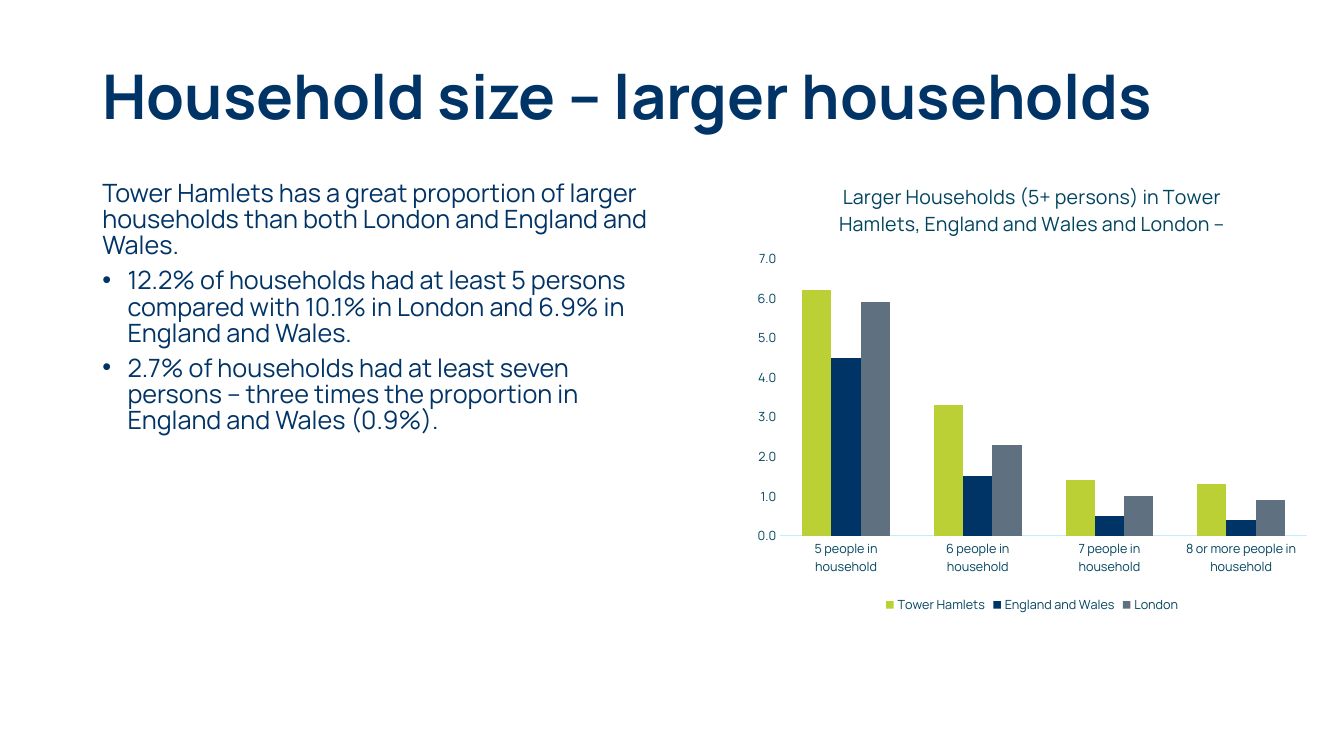
from pptx import Presentation
from pptx.chart.data import CategoryChartData
from pptx.dml.color import RGBColor
from pptx.enum.chart import XL_CHART_TYPE, XL_LEGEND_POSITION, XL_TICK_MARK
from pptx.enum.text import MSO_ANCHOR
from pptx.oxml import parse_xml
from pptx.oxml.ns import nsdecls
from pptx.util import Pt
from lxml.etree import SubElement
from pptx.oxml.ns import qn

THEME = {
    "font": "Manrope",
    "navy": RGBColor.from_string("003366"),
    "teal": RGBColor.from_string("00445E"),
    "lime": RGBColor.from_string("BBD034"),
    "slate": RGBColor.from_string("5F7180"),
    "axis": RGBColor.from_string("C1EEFF"),
    "title_size": Pt(44),
    "body_size": Pt(18),
    "chart_title_size": Pt(14),
    "label_size": Pt(9),
}


def style_font(font, size, color, bold=False):
    font.name = THEME["font"]
    font.size = size
    font.color.rgb = color
    font.bold = bold


def add_text_box(slide, left, top, width, height, text):
    box = slide.shapes.add_textbox(Pt(left), Pt(top), Pt(width), Pt(height))
    box.text_frame.word_wrap = True
    box.text_frame.text = text
    return box.text_frame


deck = Presentation()
deck.slide_width, deck.slide_height = Pt(960), Pt(540)
page = deck.slides.add_slide(deck.slide_layouts[6])

title_frame = add_text_box(page, 66, 18.72, 769.68, 104.4, "Household size – larger households")
title_frame.vertical_anchor = MSO_ANCHOR.MIDDLE
title_frame.paragraphs[0].line_spacing = 0.9
style_font(title_frame.paragraphs[0].runs[0].font, THEME["title_size"], THEME["navy"], True)

findings = [
    "Tower Hamlets has a great proportion of larger households than both London and England and Wales.",
    "12.2% of households had at least 5 persons compared with 10.1% in London and 6.9% in England and Wales.",
    "2.7% of households had at least seven persons – three times the proportion in England and Wales (0.9%).",
]
body_frame = add_text_box(page, 66, 126, 414, 342.72, "\n".join(findings))
for index, para in enumerate(body_frame.paragraphs):
    para.line_spacing = 0.87
    if index > 0:
        para.space_before = Pt(6)
        properties = para._p.get_or_add_pPr()
        properties.set("marL", str(Pt(18)))
        properties.set("indent", str(Pt(-18)))
        SubElement(properties, qn("a:buFont")).set("typeface", "Arial")
        SubElement(properties, qn("a:buChar")).set("char", "•")
    style_font(para.runs[0].font, THEME["body_size"], THEME["navy"])

households = CategoryChartData(number_format="#,##0.0")
households.categories = [
    "5 people in household",
    "6 people in household",
    "7 people in household",
    "8 or more people in household",
]
areas = [
    ("Tower Hamlets", (6.2, 3.3, 1.4, 1.3), THEME["lime"]),
    ("England and Wales", (4.5, 1.5, 0.5, 0.4), THEME["navy"]),
    ("London", (5.9, 2.3, 1.0, 0.9), THEME["slate"]),
]
for name, shares, color in areas:
    households.add_series(name, shares)

chart = page.shapes.add_chart(
    XL_CHART_TYPE.COLUMN_CLUSTERED, Pt(532.8), Pt(116.64), Pt(408.96), Pt(324.72), households
).chart
style_font(chart.font, THEME["label_size"], THEME["teal"])

chart.has_title = True
chart_title = chart.chart_title.text_frame
chart_title.text = "Larger Households (5+ persons) in Tower Hamlets, England and Wales and London –"
style_font(chart_title.paragraphs[0].runs[0].font, THEME["chart_title_size"], THEME["teal"])
chart.chart_title.include_in_layout = False

chart.has_legend = True
chart.legend.position = XL_LEGEND_POSITION.BOTTOM
chart.legend.include_in_layout = False
style_font(chart.legend.font, THEME["label_size"], THEME["teal"])

plot = chart.plots[0]
plot.gap_width = 125 if len(areas) < 3 else 150
plot.overlap = 0
plot.vary_by_categories = False
for series, (name, shares, color) in zip(plot.series, areas):
    series.format.fill.solid()
    series.format.fill.fore_color.rgb = color

for axis in (chart.category_axis, chart.value_axis):
    axis.has_major_gridlines = False
    axis.major_tick_mark = XL_TICK_MARK.NONE
    axis.minor_tick_mark = XL_TICK_MARK.NONE
    style_font(axis.tick_labels.font, THEME["label_size"], THEME["teal"])
chart.category_axis.format.line.color.rgb = THEME["axis"]
chart.category_axis.format.line.width = Pt(0.75)
chart.value_axis.format.line.fill.background()
chart.value_axis.minimum_scale = 0
chart.value_axis.maximum_scale = 7
chart.value_axis.major_unit = 1
chart.value_axis.tick_labels.number_format = "#,##0.0"
chart.value_axis.tick_labels.number_format_is_linked = False

plot_area = chart._chartSpace.chart.plotArea
for layout in plot_area.findall(qn("c:layout")):
    plot_area.remove(layout)
plot_area.insert(0, parse_xml(
    f'<c:layout {nsdecls("c")}><c:manualLayout><c:layoutTarget val="inner"/>'
    '<c:xMode val="edge"/><c:yMode val="edge"/><c:x val="0.06"/><c:y val="0.21"/>'
    '<c:w val="0.92"/><c:h val="0.61"/></c:manualLayout></c:layout>'
))

deck.save("out.pptx")
